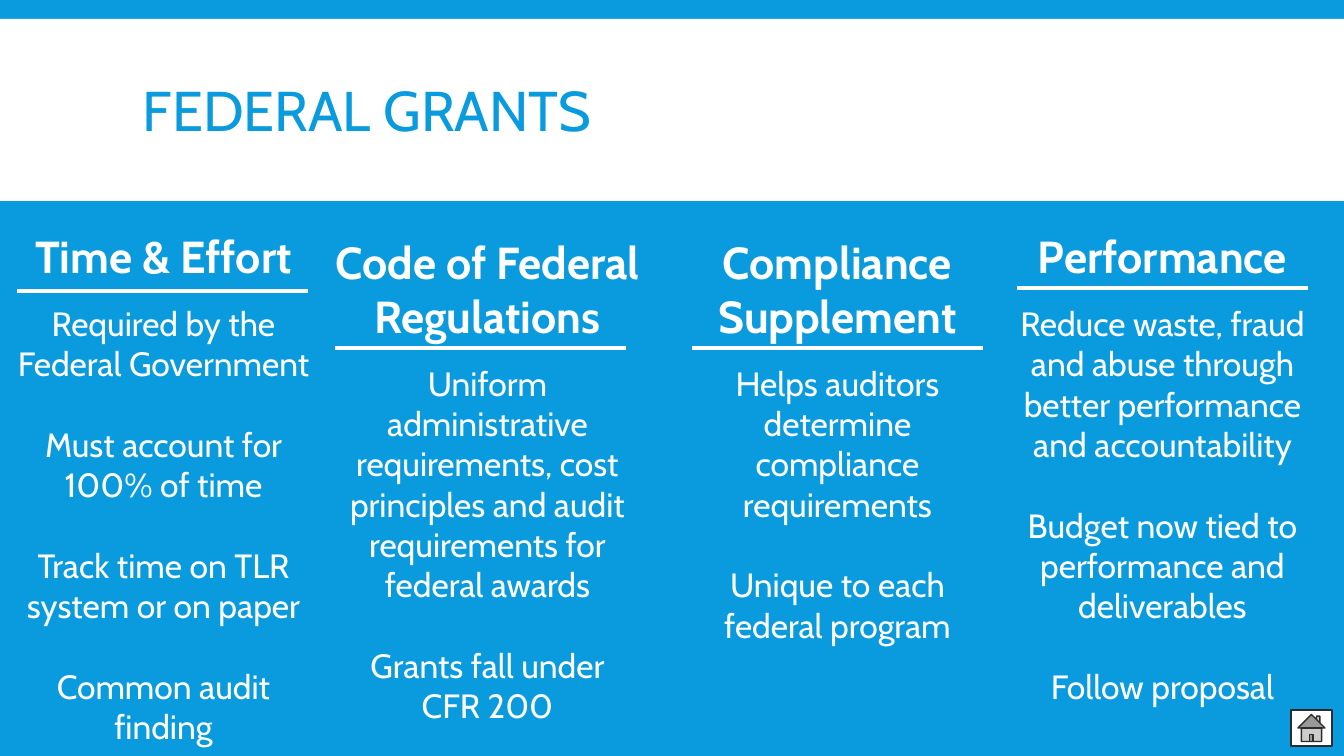
from dataclasses import dataclass

from lxml import etree
from pptx import Presentation
from pptx import util as u
from pptx.dml.color import RGBColor
from pptx.enum import shapes, text

TITLE = "FEDERAL GRANTS"
# heading, body paragraphs, (left, top, height) of text, (left, y) of rule
COLUMNS = [
    ("Time & Effort",
     ["Required by the Federal Government",
      "Must account for 100% of time",
      "Track time on TLR system or on paper",
      "Common audit finding"],
     (-1, 224, 532), (17, 291)),
    ("Code of Federal Regulations",
     ["Uniform administrative requirements, cost principles and audit "
      "requirements for federal awards",
      "Grants fall under\vCFR 200"],
     (323, 230, 546), (335, 348)),
    ("Compliance Supplement",
     ["Helps auditors determine compliance requirements",
      "Unique to each federal program"],
     (673, 230, 424), (692, 348)),
    ("Performance",
     ["Reduce waste, fraud and abuse through better performance and accountability",
      "Budget now tied to performance and deliverables",
      "Follow proposal"],
     (998, 224, 492), (1017, 288)),
]
COLUMN_WIDTH, RULE_WIDTH = 329, 291


@dataclass(frozen=True)
class Theme:
    font: str = "Cabin"
    blue: RGBColor = RGBColor(0x09, 0x9B, 0xDD)
    white: RGBColor = RGBColor(0xFF, 0xFF, 0xFF)
    dark: RGBColor = RGBColor(0x2C, 0x2C, 0x2C)
    title: int = 40
    heading: int = 32
    body: int = 24
    heading_gap: float = 14.4
    body_gap: float = 28.8
    rule: float = 2.25


THEME = Theme()


def px(length):
    return u.Emu(round(length * 914400 / 100.8))


def add_box(page, left, top, width, height):
    box = page.shapes.add_textbox(px(left), px(top), px(width), px(height))
    box.text_frame.word_wrap = True
    return box.text_frame


def write(para, words, size, color, bold=False):
    para.text = words
    para.font.name = THEME.font
    para.font.size = u.Pt(size)
    para.font.color.rgb = color
    para.font.bold = bold


def add_plain_shape(page, kind, left, top, width, height):
    shape = page.shapes.add_shape(kind, px(left), px(top), px(width), px(height))
    shape.shadow.inherit = False
    shape.fill.solid()
    shape.fill.fore_color.rgb = THEME.white
    shape.line.fill.background()
    return shape


def add_rule(page, left, y):
    rule = page.shapes.add_connector(
        shapes.MSO_CONNECTOR.STRAIGHT, px(left), px(y), px(left + RULE_WIDTH), px(y))
    rule.line.color.rgb = THEME.white
    rule.line.width = u.Pt(THEME.rule)
    properties = rule.line._get_or_add_ln().getparent()
    etree.SubElement(
        properties, "{http://schemas.openxmlformats.org/drawingml/2006/main}effectLst")


def add_column(page, heading, body, place, rule):
    left, top, height = place
    frame = add_box(page, left, top, COLUMN_WIDTH, height)
    frame.auto_size = text.MSO_AUTO_SIZE.SHAPE_TO_FIT_TEXT
    write(frame.paragraphs[0], heading, THEME.heading, THEME.white, bold=True)
    for index, words in enumerate(body):
        para = frame.add_paragraph()
        write(para, words, THEME.body, THEME.white)
        para.space_before = u.Pt(THEME.body_gap if index else THEME.heading_gap)
    for para in frame.paragraphs:
        para.alignment = text.PP_ALIGN.CENTER
    add_rule(page, *rule)


def main():
    deck = Presentation()
    deck.slide_width, deck.slide_height = px(1344), px(756)
    page = deck.slides.add_slide(deck.slide_layouts[6])
    page.background.fill.solid()
    page.background.fill.fore_color.rgb = THEME.blue

    add_plain_shape(page, shapes.MSO_SHAPE.RECTANGLE, 0, 19, 1344, 182)
    title = add_box(page, 133, 31, 1079, 166)
    title.vertical_anchor = text.MSO_ANCHOR.MIDDLE
    write(title.paragraphs[0], TITLE, THEME.title, THEME.blue)
    title.paragraphs[0].line_spacing = 0.85

    for column in COLUMNS:
        add_column(page, *column)

    home = add_plain_shape(
        page, shapes.MSO_SHAPE.ACTION_BUTTON_HOME, 1291, 710, 41, 36)
    home.line.color.rgb = THEME.dark
    home.line.width = u.Pt(1)
    deck.save("out.pptx")


if __name__ == "__main__":
    main()
